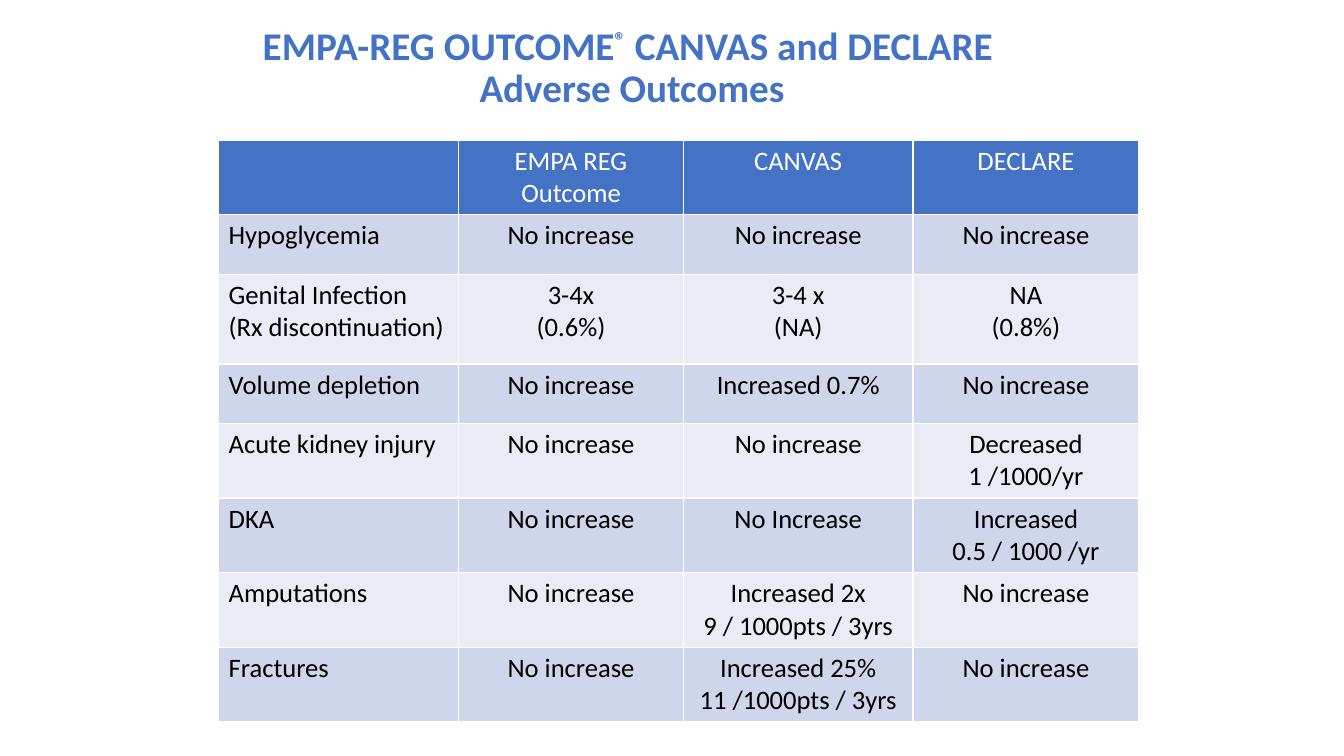
from dataclasses import dataclass

from pptx import Presentation
from pptx import util as u
from pptx.dml import color
from pptx.enum import text

COLORS = {
    "accent": "4472C4",
    "dark band": "CFD5EA",
    "light band": "E9EBF5",
    "white": "FFFFFF",
    "black": "000000",
}
FONT = "Calibri"
COLUMN_WIDTHS = (6.05, 5.66, 5.79, 5.69)


@dataclass
class Outcome:
    cells: tuple[str, ...]
    height: float = 1.5


HEADER = Outcome(("", "EMPA REG Outcome", "CANVAS", "DECLARE"))
OUTCOMES = (
    Outcome(("Hypoglycemia", "No increase", "No increase", "No increase")),
    Outcome(("Genital Infection\n(Rx discontinuation)", "3-4x\n(0.6%)",
             "3-4 x\n(NA)", "NA\n(0.8%)"), 2.26),
    Outcome(("Volume depletion", "No increase", "Increased 0.7%", "No increase")),
    Outcome(("Acute kidney injury", "No increase", "No increase",
             "Decreased\n1 /1000/yr")),
    Outcome(("DKA", "No increase", "No Increase", "Increased\n0.5 / 1000 /yr")),
    Outcome(("Amputations", "No increase", "Increased 2x\n9 / 1000pts / 3yrs",
             "No increase"), 1.85),
    Outcome(("Fractures", "No increase", "Increased 25%\n11 /1000pts / 3yrs",
             "No increase"), 1.85),
)


def rgb(name: str) -> color.RGBColor:
    return color.RGBColor.from_string(COLORS[name])


def add_run(paragraph, wording: str, size: float, color_name: str, bold: bool = False):
    run = paragraph.add_run()
    run.text = wording
    run.font.name = FONT
    run.font.size = u.Pt(size)
    run.font.bold = bold
    run.font.color.rgb = rgb(color_name)
    return run


def add_title(slide) -> None:
    title = slide.shapes.title
    title.left, title.top = u.Cm(5.26), u.Cm(0.46)
    title.width, title.height = u.Cm(21.34), u.Cm(2.54)
    frame = title.text_frame
    frame.word_wrap = True
    frame.auto_size = text.MSO_AUTO_SIZE.NONE
    frame.vertical_anchor = text.MSO_ANCHOR.MIDDLE
    paragraph = frame.paragraphs[0]
    paragraph.alignment = text.PP_ALIGN.CENTER
    paragraph.line_spacing = 0.9
    add_run(paragraph, "EMPA-REG OUTCOME", 28, "accent", bold=True)
    registered = add_run(paragraph, "®", 28, "accent", bold=True)
    registered.font._element.set("baseline", "30000")
    add_run(paragraph, " CANVAS and DECLARE ", 28, "accent", bold=True)
    paragraph.add_line_break()
    add_run(paragraph, "Adverse Outcomes", 28, "accent", bold=True)


def fill_cell(cell, wording: str, fill: str, font_color: str, centered: bool) -> None:
    """Write each line of the wording as its own paragraph on a solid fill."""
    cell.fill.solid()
    cell.fill.fore_color.rgb = rgb(fill)
    frame = cell.text_frame
    for index, line in enumerate(wording.splitlines()):
        paragraph = frame.add_paragraph() if index else frame.paragraphs[0]
        paragraph.alignment = text.PP_ALIGN.CENTER if centered else text.PP_ALIGN.LEFT
        add_run(paragraph, line, 19, font_color)


def add_outcome_table(slide) -> None:
    rows = (HEADER, *OUTCOMES)
    table = slide.shapes.add_table(
        len(rows), len(COLUMN_WIDTHS), u.Cm(5.51), u.Cm(3.53),
        u.Cm(sum(COLUMN_WIDTHS)), u.Cm(sum(row.height for row in rows)),
    ).table
    for column, width in zip(table.columns, COLUMN_WIDTHS):
        column.width = u.Cm(width)
    for row_index, outcome in enumerate(rows):
        table.rows[row_index].height = u.Cm(outcome.height)
        if row_index == 0:
            fill, font_color = "accent", "white"
        else:
            fill = "dark band" if row_index % 2 else "light band"
            font_color = "black"
        for column_index, wording in enumerate(outcome.cells):
            fill_cell(table.cell(row_index, column_index), wording, fill,
                      font_color, centered=column_index > 0)


def main() -> None:
    presentation = Presentation()
    presentation.slide_width, presentation.slide_height = u.Cm(33.87), u.Cm(19.05)
    slide = presentation.slides.add_slide(
        presentation.slide_layouts.get_by_name("Title Only"))
    add_outcome_table(slide)
    add_title(slide)
    presentation.save("out.pptx")


if __name__ == "__main__":
    main()
